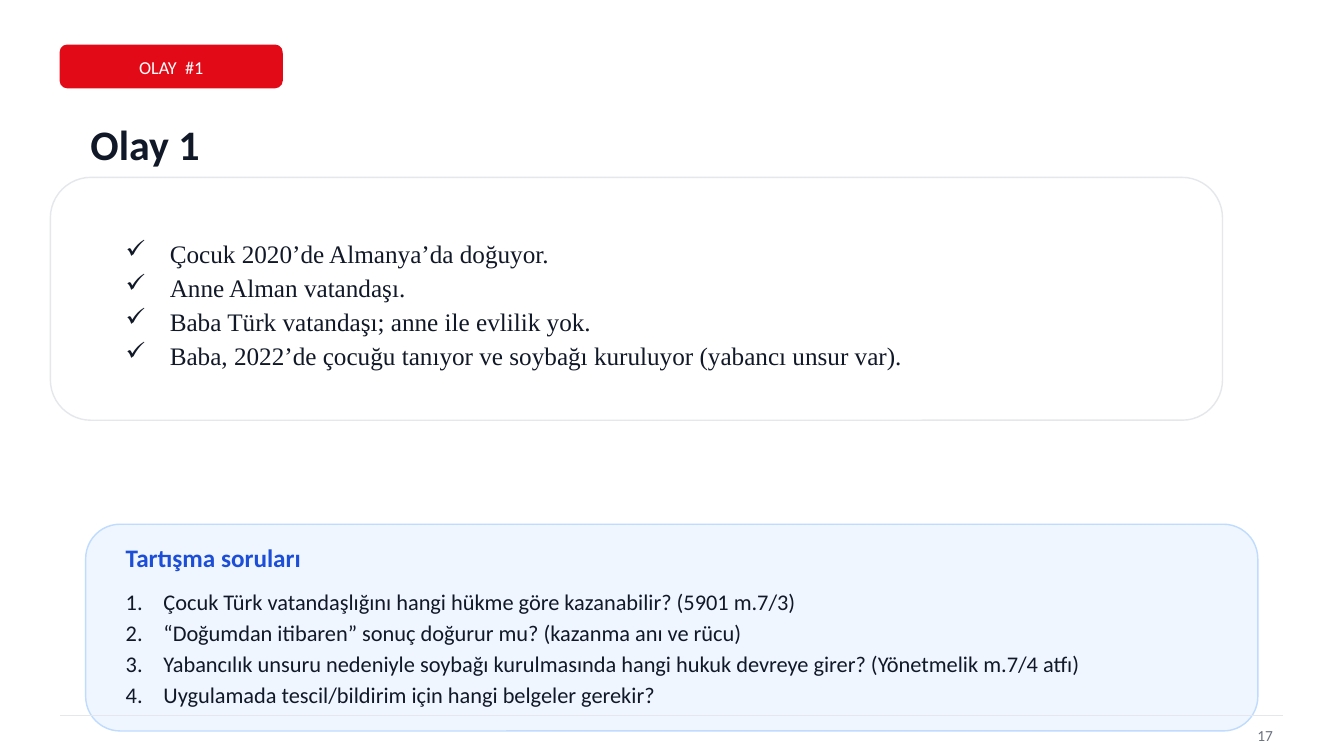
from lxml.etree import SubElement
from pptx import Presentation
from pptx.dml.color import RGBColor
from pptx.enum.shapes import MSO_CONNECTOR, MSO_SHAPE
from pptx.enum.text import MSO_ANCHOR, PP_ALIGN
from pptx.oxml.ns import qn
from pptx.util import Cm, Pt

INK = "111827"
RED = "E30A17"
BLUE = "1D4ED8"
GRAY = "6B7280"
RULE = "E5E7EB"
WHITE = "FFFFFF"

BADGE_LEFT, BADGE_WIDTH = 1.52, 5.59
CARD_WIDTH = 29.54
TEXT_LEFT, TEXT_WIDTH = 2.92, 28.02

FACTS = [
    "Çocuk 2020’de Almanya’da doğuyor.",
    "Anne Alman vatandaşı.",
    "Baba Türk vatandaşı; anne ile evlilik yok.",
    "Baba, 2022’de çocuğu tanıyor ve soybağı kuruluyor (yabancı unsur var).",
]
QUESTIONS = [
    "Çocuk Türk vatandaşlığını hangi hükme göre kazanabilir? (5901 m.7/3)",
    "“Doğumdan itibaren” sonuç doğurur mu? (kazanma anı ve rücu)",
    "Yabancılık unsuru nedeniyle soybağı kurulmasında hangi hukuk devreye girer? (Yönetmelik m.7/4 atfı)",
    "Uygulamada tescil/bildirim için hangi belgeler gerekir?",
]


def color(value):
    return RGBColor.from_string(value)


class SlideBuilder:
    font = "Calibri"
    line_width = Pt(1)

    def __init__(self, slide):
        self.slide = slide
        slide.background.fill.solid()
        slide.background.fill.fore_color.rgb = color(WHITE)

    def card(self, left, top, width, height, fill, line):
        shape = self.slide.shapes.add_shape(
            MSO_SHAPE.ROUNDED_RECTANGLE, Cm(left), Cm(top), Cm(width), Cm(height))
        shape.shadow.inherit = False
        shape.fill.solid()
        shape.fill.fore_color.rgb = color(fill)
        shape.line.color.rgb = color(line)
        shape.line.width = self.line_width

    def rule(self, left, right, top):
        connector = self.slide.shapes.add_connector(
            MSO_CONNECTOR.STRAIGHT, Cm(left), Cm(top), Cm(right), Cm(top))
        connector.line.color.rgb = color(RULE)
        connector.line.width = self.line_width
        SubElement(connector._element.spPr, qn("a:effectLst"))

    def frame(self, left, top, width, height, anchor):
        box = self.slide.shapes.add_textbox(Cm(left), Cm(top), Cm(width), Cm(height))
        box.text_frame.word_wrap = True
        box.text_frame.vertical_anchor = anchor
        return box.text_frame

    def style(self, paragraph, size, ink, bold=False, font=None):
        paragraph.font.name = font or self.font
        paragraph.font.size = Pt(size)
        paragraph.font.bold = bold
        paragraph.font.color.rgb = color(ink)

    def label(self, text, left, top, width, height, size, ink, bold=False, align=PP_ALIGN.LEFT):
        paragraph = self.frame(left, top, width, height, MSO_ANCHOR.MIDDLE).paragraphs[0]
        paragraph.text = text
        paragraph.alignment = align
        self.style(paragraph, size, ink, bold)

    def items(self, texts, top, height, size, indent, spacing, marker, anchor, font=None):
        frame = self.frame(TEXT_LEFT, top, TEXT_WIDTH, height, anchor)
        tag, attributes = marker
        for index, text in enumerate(texts):
            paragraph = frame.add_paragraph() if index else frame.paragraphs[0]
            paragraph.text = text
            paragraph.line_spacing = spacing
            properties = paragraph._p.get_or_add_pPr()
            properties.set("marL", str(Cm(indent)))
            properties.set("indent", str(-Cm(indent)))
            SubElement(properties, qn(tag), attributes)
            self.style(paragraph, size, INK, font=font)


def main():
    presentation = Presentation()
    presentation.slide_width = Cm(33.87)
    presentation.slide_height = Cm(19.05)
    builder = SlideBuilder(presentation.slides.add_slide(presentation.slide_layouts[6]))

    builder.card(BADGE_LEFT, 1.14, BADGE_WIDTH, 1.07, RED, RED)
    builder.label("OLAY  #1", BADGE_LEFT, 1.32, BADGE_WIDTH, 0.76, 13, WHITE, align=PP_ALIGN.CENTER)
    builder.label("Olay 1", 2.03, 2.79, 29.79, 1.65, 30, INK, bold=True)

    builder.card(1.27, 4.47, CARD_WIDTH, 6.12, WHITE, RULE)
    builder.items(FACTS, 5.72, 3.81, 18, 1.11, 1.12, ("a:buChar", {"char": "✓"}),
                  MSO_ANCHOR.MIDDLE, "Times New Roman")

    builder.card(2.16, 13.21, CARD_WIDTH, 5.21, "EFF6FF", "BFDBFE")
    builder.label("Tartışma soruları", TEXT_LEFT, 13.59, TEXT_WIDTH, 0.89, 18, BLUE, bold=True)
    builder.items(QUESTIONS, 14.6, 4.55, 16, 0.95, 1.15, ("a:buAutoNum", {"type": "arabicPeriod"}),
                  MSO_ANCHOR.TOP)

    builder.rule(BADGE_LEFT, 32.33, 18.03)
    builder.label("17", 31.06, 18.16, 1.27, 0.76, 11, GRAY, align=PP_ALIGN.RIGHT)
    presentation.save("out.pptx")


if __name__ == "__main__":
    main()
